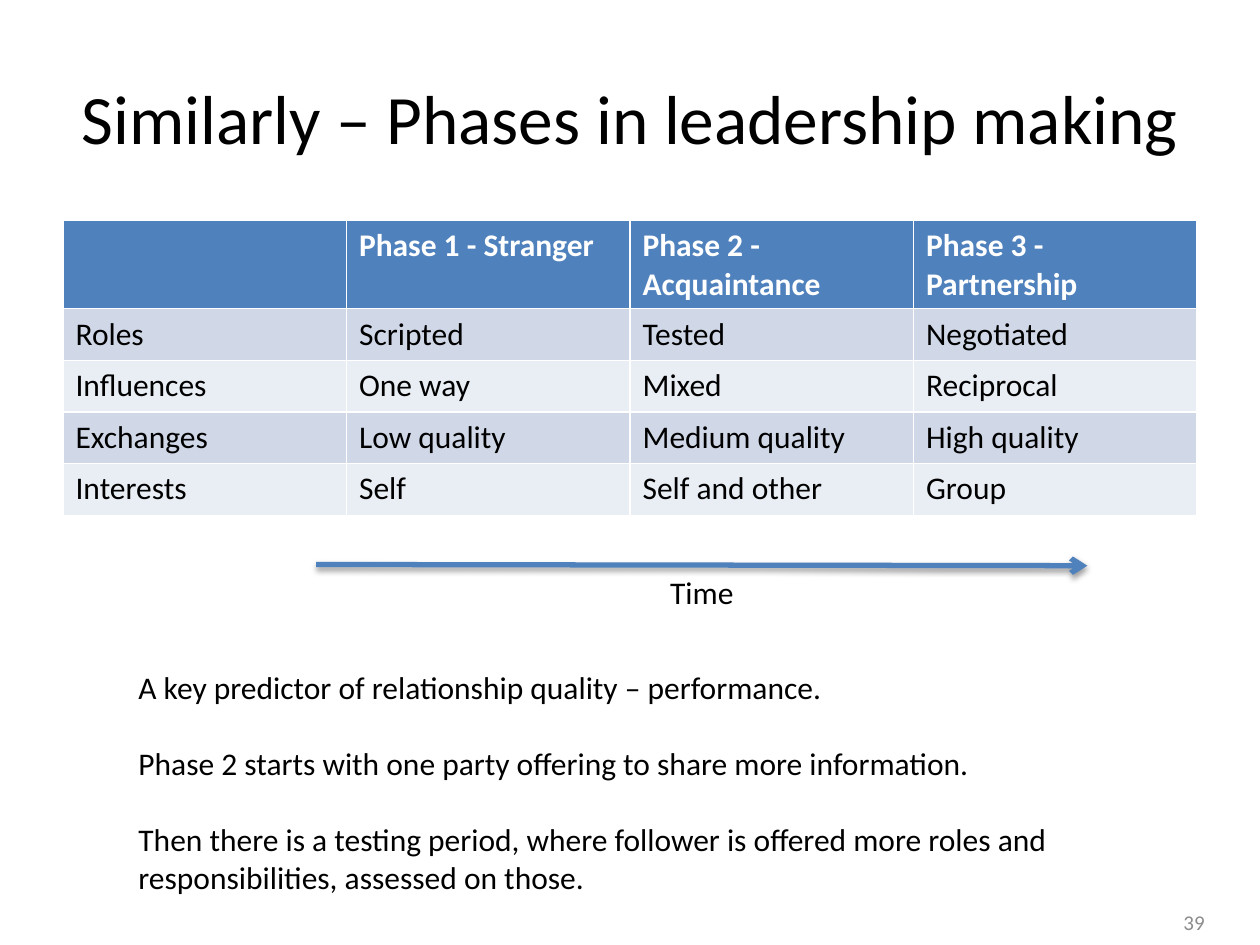
from lxml import etree
from pptx import Presentation
from pptx import util as u
from pptx.dml.color import RGBColor
from pptx.enum import shapes, text
from pptx.oxml import ns

BLACK = RGBColor(0x00, 0x00, 0x00)
WHITE = RGBColor(0xFF, 0xFF, 0xFF)
GRAY = RGBColor(0x8C, 0x8C, 0x8C)
BLUE = RGBColor(0x4F, 0x81, 0xBD)
BANDS = (RGBColor(0xD0, 0xD8, 0xE8), RGBColor(0xE9, 0xED, 0xF4))

PHASES = [
    ["", "Phase 1 - Stranger", "Phase 2 - Acquaintance", "Phase 3 - Partnership"],
    ["Roles", "Scripted", "Tested", "Negotiated"],
    ["Influences", "One way", "Mixed", "Reciprocal"],
    ["Exchanges", "Low quality", "Medium quality", "High quality"],
    ["Interests", "Self", "Self and other", "Group"],
]
NOTES = [
    "A key predictor of relationship quality – performance.",
    "Phase 2 starts with one party offering to share more information.",
    "Then there is a testing period, where follower is offered more roles "
    "and responsibilities, assessed on those.",
]


class SlideBuilder:
    font_name = "Calibri"
    body_size = 18

    def __init__(self, slide):
        self.slide = slide

    def style(self, paragraph, size=body_size, color=BLACK, bold=False):
        font = paragraph.font
        font.name, font.size, font.bold = self.font_name, u.Pt(size), bold
        font.color.rgb = color

    def title(self, wording, left, top, width, height):
        shape = self.slide.shapes.title
        shape.left, shape.top = u.Inches(left), u.Inches(top)
        shape.width, shape.height = u.Inches(width), u.Inches(height)
        frame = shape.text_frame
        frame.text = wording
        frame.auto_size = text.MSO_AUTO_SIZE.NONE
        frame.vertical_anchor = text.MSO_ANCHOR.MIDDLE
        frame.paragraphs[0].alignment = text.PP_ALIGN.CENTER
        self.style(frame.paragraphs[0], 39.6)

    def text_box(self, lines, left, top, width, height, size=body_size,
                 color=BLACK, align=text.PP_ALIGN.LEFT,
                 anchor=text.MSO_ANCHOR.TOP, wrap=True, gap=0):
        shape = self.slide.shapes.add_textbox(
            u.Inches(left), u.Inches(top), u.Inches(width), u.Inches(height))
        frame = shape.text_frame
        frame.text = "\n".join(lines)
        frame.word_wrap = wrap
        frame.vertical_anchor = anchor
        for index, paragraph in enumerate(frame.paragraphs):
            paragraph.alignment = align
            paragraph.space_before = u.Pt(gap if index else 0)
            self.style(paragraph, size, color)

    def table(self, rows, left, top, width, header_height, row_height):
        height = header_height + row_height * (len(rows) - 1)
        table = self.slide.shapes.add_table(
            len(rows), len(rows[0]), u.Inches(left), u.Inches(top),
            u.Inches(width), u.Inches(height)).table
        for row_index, row in enumerate(rows):
            header = row_index == 0
            table.rows[row_index].height = u.Inches(header_height if header else row_height)
            for column_index, wording in enumerate(row):
                cell = table.cell(row_index, column_index)
                cell.text = wording
                cell.fill.solid()
                cell.fill.fore_color.rgb = BLUE if header else BANDS[(row_index - 1) % 2]
                self.style(cell.text_frame.paragraphs[0],
                           color=WHITE if header else BLACK, bold=header)

    def arrow(self, start, end, color, width):
        """Draw an arrow with a soft shadow beneath it."""
        connector = self.slide.shapes.add_connector(
            shapes.MSO_CONNECTOR.STRAIGHT, *map(u.Inches, start + end))
        connector.line.color.rgb = color
        connector.line.width = u.Pt(width)
        line = connector.line._get_or_add_ln()
        etree.SubElement(line, ns.qn("a:tailEnd"), type="arrow")
        effects = etree.SubElement(connector._element.spPr, ns.qn("a:effectLst"))
        shadow = etree.SubElement(effects, ns.qn("a:outerShdw"), blurRad="40000",
                                  dist="20000", dir="5400000", rotWithShape="0")
        shade = etree.SubElement(shadow, ns.qn("a:srgbClr"), val=str(BLACK))
        etree.SubElement(shade, ns.qn("a:alpha"), val="38000")


def main():
    presentation = Presentation()
    presentation.slide_width, presentation.slide_height = u.Inches(10), u.Inches(7.5)
    title_only = presentation.slide_layouts[5]
    builder = SlideBuilder(presentation.slides.add_slide(title_only))

    builder.text_box(["39"], 7.33, 7.12, 2.33, 0.4, size=12, color=GRAY,
                     align=text.PP_ALIGN.RIGHT, anchor=text.MSO_ANCHOR.MIDDLE)
    builder.title("Similarly – Phases in leadership making", 0.5, 0.3, 9, 1.25)
    builder.table(PHASES, 0.5, 1.75, 9, header_height=0.7, row_height=0.41)
    builder.arrow((2.51, 4.48), (8.63, 4.49), BLUE, 3)
    builder.text_box(["Time"], 5.22, 4.5, 0.71, 0.4, wrap=False)
    builder.text_box(NOTES, 1, 5.25, 8.81, 2.22, gap=22)

    presentation.save("out.pptx")


if __name__ == "__main__":
    main()
